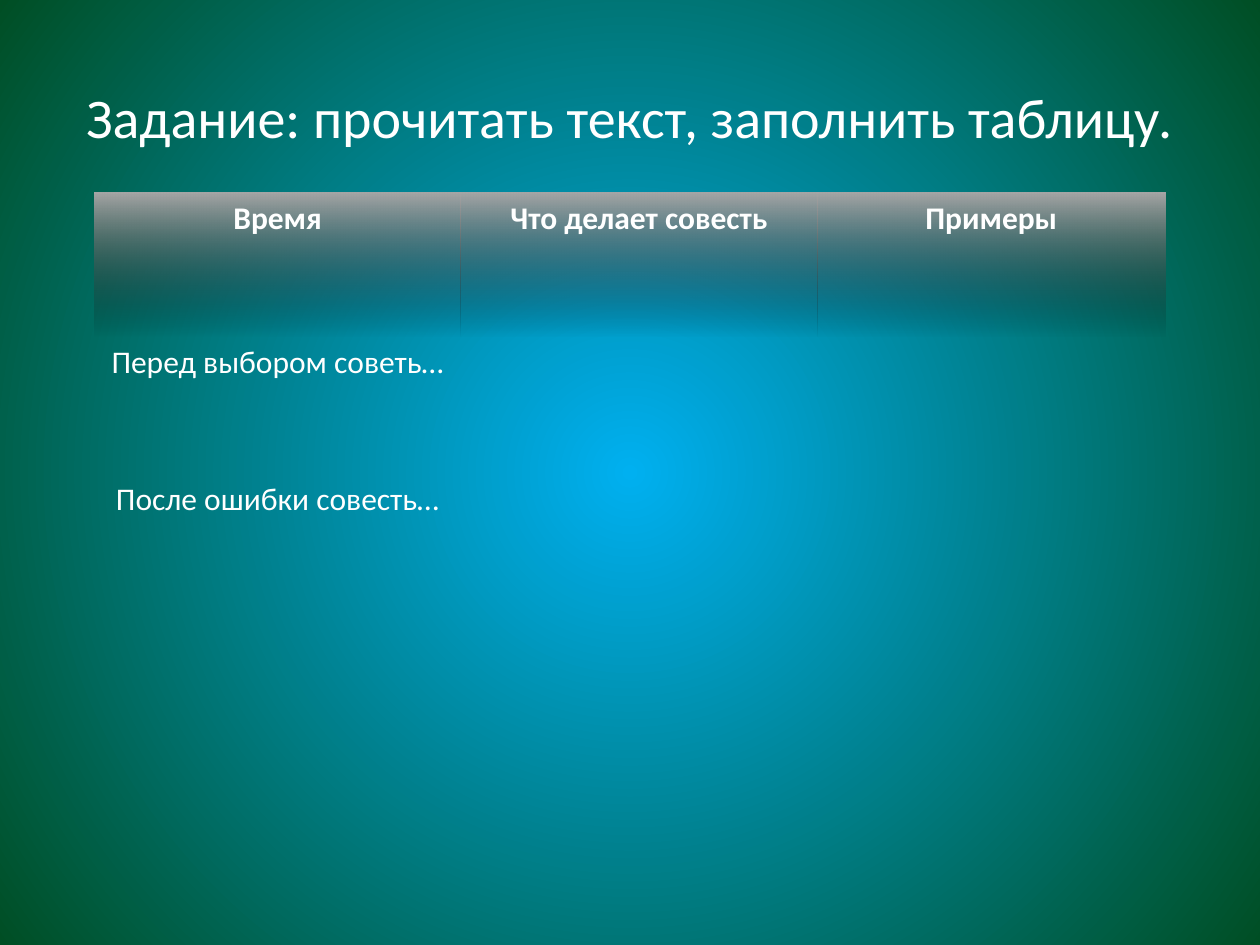
from lxml.etree import SubElement
from pptx import Presentation
from pptx.dml.color import RGBColor
from pptx.enum.text import MSO_ANCHOR, PP_ALIGN
from pptx.oxml import parse_xml
from pptx.oxml.ns import nsdecls, qn
from pptx.util import Inches, Pt

COLORS = {"text": "FFFFFF", "glow": "00B0F0", "edge": "004E24",
          "head": "A6A6A6", "fade": "000000"}
FONT = "Calibri"
WIDE, HIGH = Inches(10), Inches(7.5)
HEADS = ("Время", "Что делает совесть", "Примеры")
STAGES = ("Перед выбором советь…", "После ошибки совесть…")
COLS = (0.342, 0.333, 0.325)  # shares of the table width
ROWS = (0.344, 0.328, 0.328)  # shares of the table height
PLAIN = "{2D5ABB26-0587-4C30-8999-92F81FD0307C}"  # no style, no grid


def area(left, top, width, height):
    """Turn shares of the slide into a box."""
    return (round(left * WIDE), round(top * HIGH),
            round(width * WIDE), round(height * HIGH))


def blend(holder, first, last, shade, clear=False):
    """Swap the solid fill of a holder for a gradient."""
    fill = parse_xml(f'<a:gradFill rotWithShape="1" {nsdecls("a")}>'
                     f'<a:gsLst/>{shade}</a:gradFill>')
    stops = fill.find(qn("a:gsLst"))
    for pos, name in ((0, first), (100000, last)):
        stop = SubElement(stops, qn("a:gs"), pos=str(pos))
        tint = SubElement(stop, qn("a:srgbClr"), val=COLORS[name])
    if clear:
        SubElement(tint, qn("a:alpha"), val="0")
    holder.replace(holder.find(qn("a:solidFill")), fill)


def write(frame, text, size, bold=False):
    para = frame.paragraphs[0]
    para.alignment = PP_ALIGN.CENTER
    run = para.add_run()
    run.text = text
    run.font.name = FONT
    run.font.size = Pt(size)
    run.font.bold = bold
    run.font.color.rgb = RGBColor.from_string(COLORS["text"])


def add_back(slide):
    slide.background.fill.solid()
    blend(slide.element.find(".//" + qn("p:bgPr")), "glow", "edge",
          '<a:path path="circle"><a:fillToRect l="50000" t="50000" '
          'r="50000" b="50000"/></a:path>')


def add_title(slide, box):
    frame = slide.shapes.add_textbox(*box).text_frame
    frame.word_wrap = True
    frame.vertical_anchor = MSO_ANCHOR.MIDDLE
    write(frame, "Задание: прочитать текст, заполнить таблицу.", 32)


def add_grid(slide, box):
    width, height = box[2:]
    table = slide.shapes.add_table(len(ROWS), len(COLS), *box).table
    table.horz_banding = False
    table._tbl.tblPr.find(qn("a:tableStyleId")).text = PLAIN
    for col, share in zip(table.columns, COLS):
        col.width = round(share * width)
    for row, share in zip(table.rows, ROWS):
        row.height = round(share * height)

    # Header row fades down into the background
    for cell, text in zip(table.rows[0].cells, HEADS):
        cell.fill.solid()
        blend(cell._tc.get_or_add_tcPr(), "head", "fade",
              '<a:lin ang="5400000" scaled="0"/>', clear=True)
        write(cell.text_frame, text, 18, bold=True)

    # Body rows: a stage, then cells to fill in
    for i, text in enumerate(STAGES, 1):
        for cell in table.rows[i].cells:
            cell.fill.background()
        write(table.cell(i, 0).text_frame, text, 18)


def main():
    deck = Presentation()
    deck.slide_width, deck.slide_height = WIDE, HIGH
    slide = deck.slides.add_slide(deck.slide_layouts[6])
    add_back(slide)
    add_title(slide, area(0.05, 0.04, 0.9, 1 / 6))
    add_grid(slide, area(0.075, 0.204, 0.85, 0.443))
    deck.save("out.pptx")


if __name__ == "__main__":
    main()
